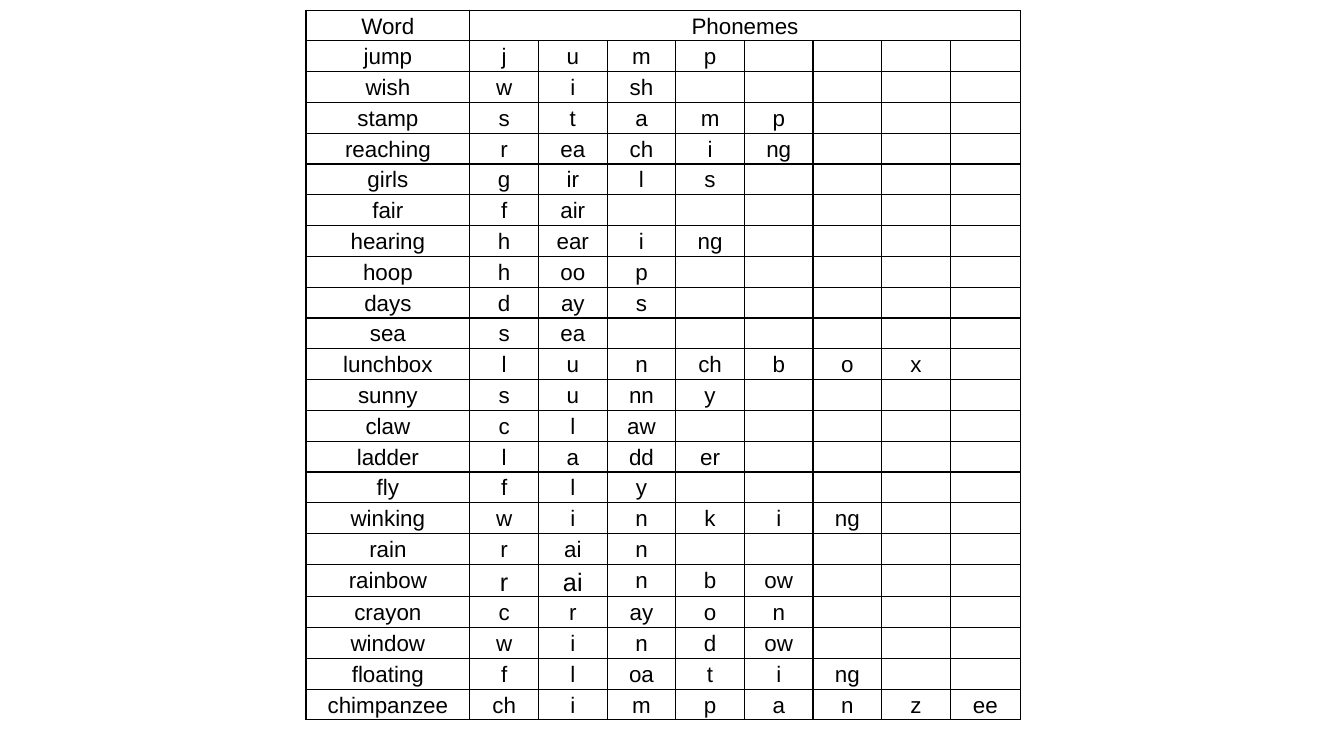
"""Builds a slide with a table that splits words into phonemes."""
from dataclasses import dataclass

from lxml.etree import SubElement
from pptx import Presentation
from pptx.dml.color import RGBColor
from pptx.enum.text import PP_ALIGN
from pptx.oxml.ns import qn
from pptx.util import Cm, Pt

HEADER = ("Word", "Phonemes")
WORDS = [
    ("jump", "j u m p"),
    ("wish", "w i sh"),
    ("stamp", "s t a m p"),
    ("reaching", "r ea ch i ng"),
    ("girls", "g ir l s"),
    ("fair", "f air"),
    ("hearing", "h ear i ng"),
    ("hoop", "h oo p"),
    ("days", "d ay s"),
    ("sea", "s ea"),
    ("lunchbox", "l u n ch b o x"),
    ("sunny", "s u nn y"),
    ("claw", "c l aw"),
    ("ladder", "l a dd er"),
    ("fly", "f l y"),
    ("winking", "w i n k i ng"),
    ("rain", "r ai n"),
    ("rainbow", "r ai n b ow "),
    ("crayon", "c r ay o n"),
    ("window", "w i n d ow"),
    ("floating", "f l oa t i ng"),
    ("chimpanzee", "ch i m p a n z ee"),
]
LARGE_CELLS = {("rainbow", 1), ("rainbow", 2)}

SLIDE = (33.87, 19.05)
LEFT, TOP = 7.71, 0.26
COLUMNS = [4.13] + [1.73] * 7 + [1.76]
ROW = 0.77
SIDE_MARGIN = 0.1


@dataclass(frozen=True)
class Theme:
    ink: str = "000000"
    font: str = "Arial"
    size: int = 16
    large: int = 18
    border: int = 1
    spacing: float = 1.15


THEME = Theme()


def format_cell(cell):
    cell.margin_left = cell.margin_right = Cm(SIDE_MARGIN)
    cell.margin_top = cell.margin_bottom = 0
    tc_pr = cell._tc.get_or_add_tcPr()
    for side in ("lnL", "lnR", "lnT", "lnB"):
        ln = SubElement(tc_pr, qn(f"a:{side}"), w=str(Pt(THEME.border)))
        fill = SubElement(ln, qn("a:solidFill"))
        SubElement(fill, qn("a:srgbClr"), val=THEME.ink)
    cell.fill.background()


def write_cell(cell, text, size):
    p = cell.text_frame.paragraphs[0]
    p.alignment = PP_ALIGN.CENTER
    p.line_spacing = THEME.spacing
    r = p.add_run()
    r.text = text
    r.font.name = THEME.font
    r.font.size = Pt(size)
    r.font.color.rgb = RGBColor.from_string(THEME.ink)


def main():
    prs = Presentation()
    prs.slide_width, prs.slide_height = map(Cm, SLIDE)
    s = prs.slides.add_slide(prs.slide_layouts[6])

    rows = [HEADER] + [(word, *sounds.split(" ")) for word, sounds in WORDS]
    table = s.shapes.add_table(
        len(rows), len(COLUMNS), Cm(LEFT), Cm(TOP),
        Cm(sum(COLUMNS)), Cm(ROW * len(rows))).table
    table.first_row = table.horz_banding = False
    for column, width in zip(table.columns, COLUMNS):
        column.width = Cm(width)
    for row in table.rows:
        row.height = Cm(ROW)
    for cell in table.iter_cells():
        format_cell(cell)
    table.cell(0, 1).merge(table.cell(0, len(COLUMNS) - 1))

    for i, texts in enumerate(rows):
        for j, text in enumerate(texts):
            size = THEME.large if (texts[0], j) in LARGE_CELLS else THEME.size
            write_cell(table.cell(i, j), text, size)

    prs.save("out.pptx")


if __name__ == "__main__":
    main()
